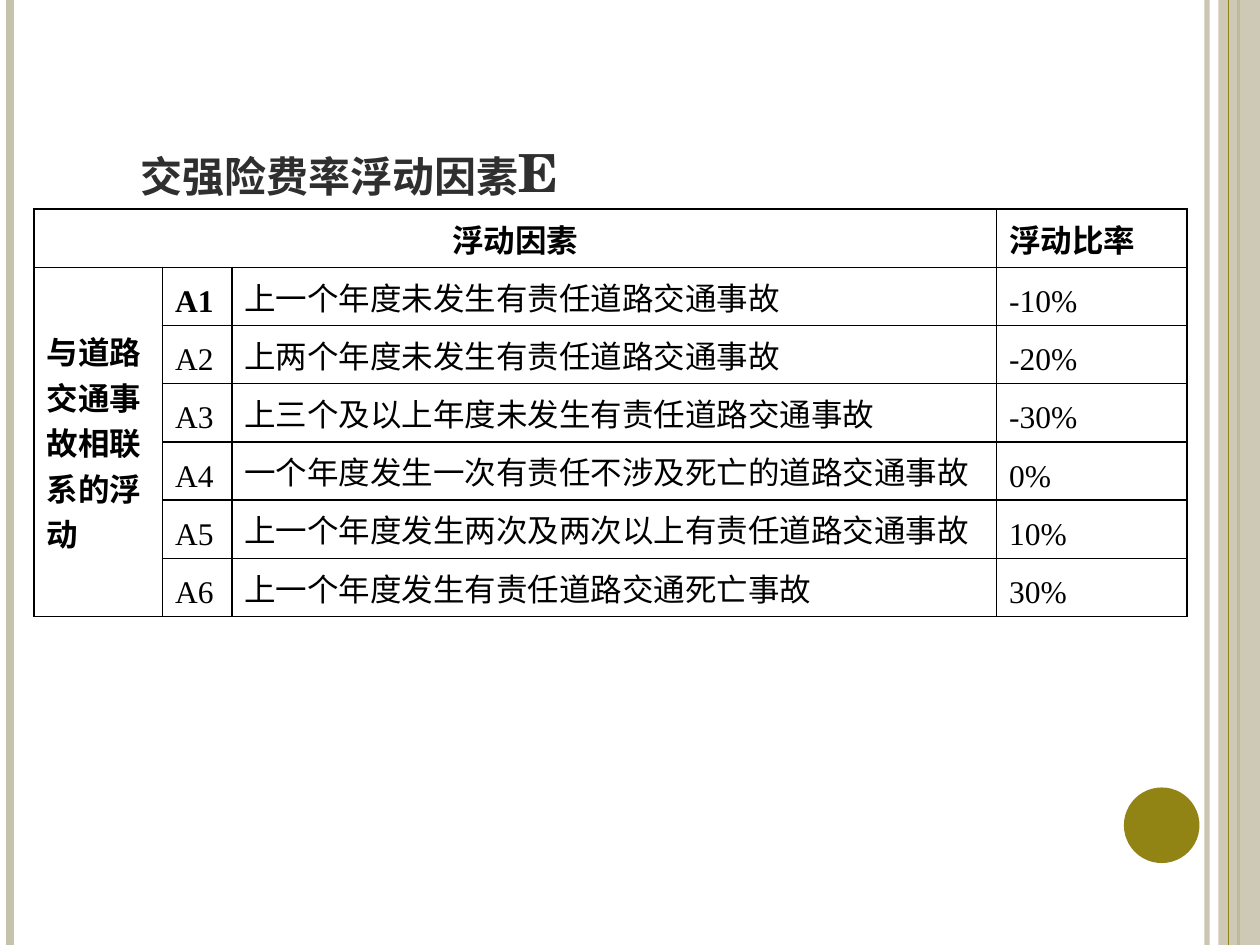
from dataclasses import dataclass

from lxml import etree
from pptx import Presentation, util as u
from pptx.dml.color import RGBColor
from pptx.enum import shapes, text
from pptx.oxml import ns


@dataclass(frozen=True)
class Theme:
    olive: str = "918415"
    sand: str = "C7C2AC"
    ink: str = "000000"
    heading: str = "2F2F2F"
    paper: str = "FFFFFF"
    title_font: str = "TeX Gyre Schola"
    body_font: str = "Times New Roman"
    title_size: int = 30
    body_size: int = 18
    border: int = 1
    hang: float = 0.49


class Deck:
    """Places elements on a grid of 100 columns by 75 rows."""
    COLS, ROWS = 100, 75

    def __init__(self, theme):
        self.t = theme
        self.prs = Presentation()
        self.prs.slide_width, self.prs.slide_height = u.Inches(10), u.Inches(7.5)
        self.s = self.prs.slides.add_slide(self.prs.slide_layouts[6])

    def x(self, cols):
        return round(self.prs.slide_width * cols / self.COLS)

    def y(self, rows):
        return round(self.prs.slide_height * rows / self.ROWS)

    def box(self, left, top, width, height):
        return self.x(left), self.y(top), self.x(width), self.y(height)

    def paint(self, fill, color, opacity=100):
        fill.solid()
        fill.fore_color.rgb = RGBColor.from_string(color)
        if opacity < 100:
            clr = fill._xPr.find(".//" + ns.qn("a:srgbClr"))
            etree.SubElement(clr, ns.qn("a:alpha"), val=str(opacity * 1000))

    def rule(self, col, color, width, opacity=100):
        c = self.s.shapes.add_connector(shapes.MSO_CONNECTOR.STRAIGHT, self.x(col), 0,
                                        self.x(col), self.y(self.ROWS))
        c.line.width = u.Pt(width)
        self.paint(c.line.fill, color, opacity)
        etree.SubElement(c._element.spPr, ns.qn("a:effectLst"))

    def shape(self, kind, box, color, opacity=100):
        sp = self.s.shapes.add_shape(kind, *self.box(*box))
        sp.shadow.inherit = False
        sp.line.fill.background()
        self.paint(sp.fill, color, opacity)

    def label(self, tf, words, color, **font):
        p = tf.paragraphs[0]
        r = p.add_run()
        r.text = words
        for name, value in font.items():
            setattr(r.font, name, value)
        r.font.color.rgb = RGBColor.from_string(color)
        return p, r

    def title(self, words, box):
        tf = self.s.shapes.add_textbox(*self.box(*box)).text_frame
        tf.word_wrap = True
        tf.vertical_anchor = text.MSO_ANCHOR.BOTTOM
        _, r = self.label(tf, words, self.t.heading, name=self.t.title_font,
                          size=u.Pt(self.t.title_size), bold=True)
        r.font._element.set("cap", "small")

    def outline(self, cell):
        tcPr = cell._tc.get_or_add_tcPr()
        for i, side in enumerate(("lnL", "lnR", "lnT", "lnB")):
            ln = etree.Element(ns.qn("a:" + side), w=str(u.Pt(self.t.border)))
            fill = etree.SubElement(ln, ns.qn("a:solidFill"))
            etree.SubElement(fill, ns.qn("a:srgbClr"), val=self.t.ink)
            tcPr.insert(i, ln)

    def cell(self, cell, words, bold=False, hang=True, center=False, middle=False):
        anchor = text.MSO_ANCHOR.MIDDLE if middle else text.MSO_ANCHOR.BOTTOM
        cell.vertical_anchor = anchor
        p, _ = self.label(cell.text_frame, words, self.t.ink, name=self.t.body_font,
                          size=u.Pt(self.t.body_size), bold=bold)
        if center:
            p.alignment = text.PP_ALIGN.CENTER
        if hang:
            pPr = p._p.get_or_add_pPr()
            pPr.set("marL", str(u.Inches(self.t.hang)))
            pPr.set("indent", str(-u.Inches(self.t.hang)))

    def table(self, left, top, widths, row_height, header, group, rows):
        n = len(rows) + 1
        tbl = self.s.shapes.add_table(n, len(widths), *self.box(
            left, top, sum(widths), n * row_height)).table
        tbl.first_row = tbl.horz_banding = False
        for col, width in zip(tbl.columns, widths):
            col.width = self.x(width)
        for row in tbl.rows:
            row.height = self.y(row_height)
        for cell in tbl.iter_cells():
            self.paint(cell.fill, self.t.paper)
            self.outline(cell)

        # Header row and the group label beside the rows
        tbl.cell(0, 0).merge(tbl.cell(0, 2))
        tbl.cell(1, 0).merge(tbl.cell(n - 1, 0))
        self.cell(tbl.cell(0, 0), header[0], bold=True, center=True)
        self.cell(tbl.cell(0, 3), header[1], bold=True, hang=False)
        self.cell(tbl.cell(1, 0), group, bold=True, hang=False, middle=True)

        # Factors
        for i, (factor, rate) in enumerate(rows, 1):
            self.cell(tbl.cell(i, 1), f"A{i}", bold=i == 1, hang=i > 1)
            self.cell(tbl.cell(i, 2), factor)
            self.cell(tbl.cell(i, 3), rate)


FACTORS = [
    ("上一个年度未发生有责任道路交通事故", "-10%"),
    ("上两个年度未发生有责任道路交通事故", "-20%"),
    ("上三个及以上年度未发生有责任道路交通事故", "-30%"),
    ("一个年度发生一次有责任不涉及死亡的道路交通事故", "0%"),
    ("上一个年度发生两次及两次以上有责任道路交通事故", "10%"),
    ("上一个年度发生有责任道路交通死亡事故", "30%"),
]


def main():
    t = Theme()
    d = Deck(t)

    # Side bands and disc
    d.rule(95.8, t.sand, 3, 93)
    d.rule(0.8, t.sand, 4.5)
    d.rule(98.3, t.olive, 1.5)
    d.shape(shapes.MSO_SHAPE.RECTANGLE, (96.7, 0, 3.3, 75), t.sand, 87)
    d.rule(97.5, t.olive, 0.75)
    d.shape(shapes.MSO_SHAPE.OVAL, (89.2, 62.5, 6, 6), t.olive)

    # Title and rate table
    d.title("交强险费率浮动因素E", (10.2, 1.1, 78.3, 15.5))
    d.table(2.7, 16.6, (10.2, 5.5, 60.7, 15.1), 4.62,
            ("浮动因素", "浮动比率"), "与道路交通事故相联系的浮动", FACTORS)

    d.prs.save("out.pptx")


if __name__ == "__main__":
    main()
